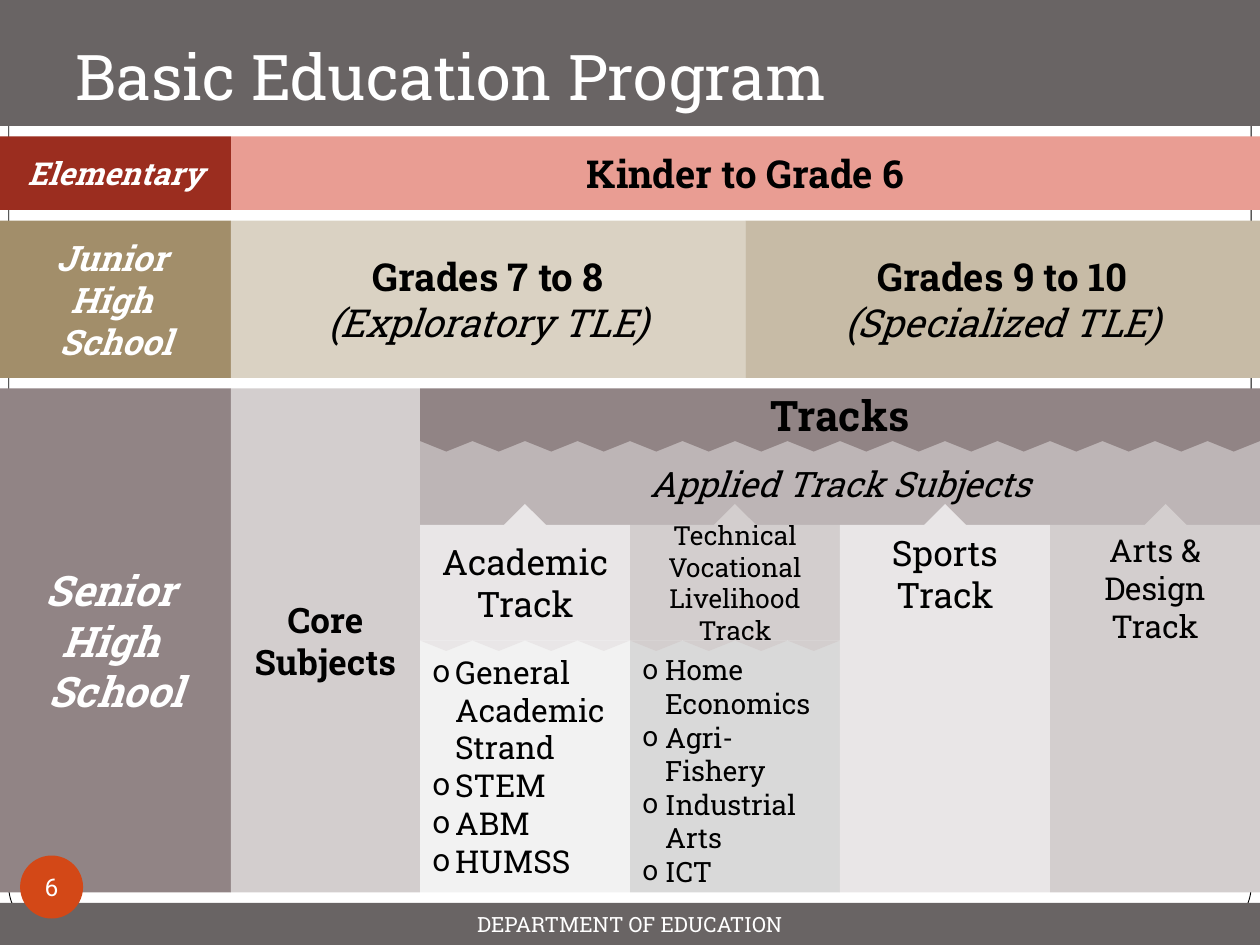
import pptx
import pptx.util
import pptx.dml.color
import pptx.enum.shapes
import pptx.enum.text
import pptx.oxml.ns
from lxml import etree

Cm, Pt = pptx.util.Cm, pptx.util.Pt
SHAPE = pptx.enum.shapes.MSO_SHAPE
ANCHOR = pptx.enum.text.MSO_ANCHOR
ALIGN = pptx.enum.text.PP_ALIGN

COLORS = {
    "white": "FFFFFF", "black": "000000", "banner": "696464", "badge": "D34817",
    "red": "9B2D1F", "pink": "E99D93",
    "tan": "A28E6A", "sand": "DAD2C3", "khaki": "C7BBA6",
    "mauve": "918485", "applied": "BDB5B6", "core": "D3CECE", "light": "E9E6E7",
    "academic_strands": "F2F2F2", "vocational_strands": "D9D9D9",
}

# Content. Places are left, top, width, height in grid units of 1/12 inch.
# Each line of text is (text, style), where b is bold and i is italic.
BLOCKS = [
    ((22, 13, 98, 7), "pink", "black", 22, [("Kinder to Grade 6", "b")]),
    ((0, 13, 22, 7), "red", "white", 18, [("Elementary", "bi")]),
    ((0, 21, 22, 15), "tan", "white", 20,
     [("Junior ", "bi"), ("High ", "bi"), ("School", "bi")]),
    ((22, 21, 49, 15), "sand", "black", 22,
     [("Grades 7 to 8", "b"), ("(Exploratory TLE)", "i")]),
    ((71, 21, 49, 15), "khaki", "black", 22,
     [("Grades 9 to 10", "b"), ("(Specialized TLE)", "i")]),
    ((0, 37, 22, 48), "mauve", "white", 24,
     [("Senior ", "bi"), ("High ", "bi"), ("School", "bi")]),
    ((22, 37, 18, 48), "core", "black", 20, [("Core Subjects", "b")]),
    ((40, 37, 80, 5), "mauve", "black", 24, [("Tracks", "b")]),
    ((40, 42, 80, 8), "applied", "black", 20, [("Applied Track Subjects", "i")]),
]
# Track name, size, colour, pointer left, strands, strand size, strand colour
TRACKS = [
    ("Academic Track", 20, "light", 48,
     ["General Academic Strand", "STEM", "ABM", "HUMSS"], 18, "academic_strands"),
    ("Technical Vocational Livelihood Track", 15, "core", 68,
     ["Home Economics", "Agri-Fishery", "Industrial Arts", "ICT"], 16,
     "vocational_strands"),
    ("Sports Track", 20, "light", 88, [], 0, None),
    ("Arts & Design Track", 18, "core", 109, [], 0, None),
]
TRACK_LEFT, TRACK_TOP, TRACK_WIDTH = 40, 50, 20
NAME_HEIGHT, FULL_HEIGHT = 11, 35
TOOTH_WIDTH = 5


def units(count):
    return Cm(count * 2.54 / 12)


def rgb(name):
    return pptx.dml.color.RGBColor.from_string(COLORS[name])


def add_block(place, fill, kind=SHAPE.RECTANGLE):
    block = slide.shapes.add_shape(kind, *map(units, place))
    block.shadow.inherit = False
    block.fill.solid()
    block.fill.fore_color.rgb = rgb(fill)
    block.line.fill.background()
    return block


def write(block, lines, size, color="black", anchor=ANCHOR.MIDDLE,
          align=ALIGN.CENTER, font="Roboto Slab"):
    frame = block.text_frame
    frame.word_wrap = True
    frame.vertical_anchor = anchor
    frame.text = "\n".join(text for text, _ in lines)
    for paragraph, (_, style) in zip(frame.paragraphs, lines):
        paragraph.alignment = align
        for run in paragraph.runs:
            run.font.name = font
            run.font.size = Pt(size)
            run.font.color.rgb = rgb(color)
            run.font.bold = "b" in style
            run.font.italic = "i" in style
    return frame


def add_bullets(frame):
    for paragraph in frame.paragraphs:
        properties = paragraph._p.get_or_add_pPr()
        properties.set("marL", str(Cm(0.46)))
        properties.set("indent", str(-Cm(0.46)))
        for tag, key, value in (("a:buFont", "typeface", "Roboto"),
                                ("a:buChar", "char", "o")):
            etree.SubElement(properties, pptx.oxml.ns.qn(tag)).set(key, value)


def add_teeth(left, top, width, fill):
    for tooth_left in range(left, left + width, TOOTH_WIDTH):
        tooth = add_block((tooth_left, top, TOOTH_WIDTH, 1), fill,
                          SHAPE.ISOSCELES_TRIANGLE)
        tooth.rotation = 180


presentation = pptx.Presentation()
presentation.slide_width, presentation.slide_height = Cm(25.4), Cm(19.05)
slide = presentation.slides.add_slide(presentation.slide_layouts[6])

# Slide border
border = add_block((0.84, 0.96, 118.32, 87.84), "white", SHAPE.ROUNDED_RECTANGLE)
border.adjustments[0] = 0.05
border.line.color.rgb = rgb("black")
border.line.width = Pt(0.5)

# Title and footer bands
add_block((0, 0, 120, 12), "banner")
title = slide.shapes.add_textbox(*map(units, (6, 0, 108, 12)))
title_frame = write(title, [("Basic Education Program", "")], 36, "white",
                    ANCHOR.BOTTOM, ALIGN.LEFT)
title_frame.margin_bottom = Cm(0.25)
add_block((0, 86, 120, 4), "banner")
footer = slide.shapes.add_textbox(*map(units, (6, 86, 108, 4)))
write(footer, [("DEPARTMENT OF EDUCATION", "")], 12, "white")

# School levels
for place, fill, color, size, lines in BLOCKS:
    write(add_block(place, fill), lines, size, color)
add_teeth(TRACK_LEFT, 42, 80, "mauve")

# Senior high school tracks, with strands where there are any
for column, (name, size, fill, pointer, strands, strand_size,
             strand_fill) in enumerate(TRACKS):
    left = TRACK_LEFT + column * TRACK_WIDTH
    height = NAME_HEIGHT if strands else FULL_HEIGHT
    track = add_block((left, TRACK_TOP, TRACK_WIDTH, height), fill)
    write(track, [(name, "")], size,
          anchor=ANCHOR.MIDDLE if strands else ANCHOR.TOP)
    add_block((pointer, TRACK_TOP - 2, 4, 2), fill, SHAPE.ISOSCELES_TRIANGLE)
    if strands:
        strand_top = TRACK_TOP + NAME_HEIGHT
        strand_box = add_block((left, strand_top, TRACK_WIDTH,
                                FULL_HEIGHT - NAME_HEIGHT), strand_fill)
        strand_frame = write(strand_box, [(strand, "") for strand in strands],
                             strand_size, anchor=ANCHOR.TOP, align=ALIGN.LEFT)
        strand_frame.margin_top = strand_frame.margin_bottom = Cm(0.25)
        add_bullets(strand_frame)
        add_teeth(left, strand_top, TRACK_WIDTH, fill)

# Page number badge
badge = add_block((1.92, 81.48, 6, 6), "badge", SHAPE.OVAL)
badge_frame = write(badge, [("6", "")], 14, "white", font="Roboto")
badge_frame.word_wrap = False
badge_frame.margin_left = badge_frame.margin_right = 0
badge_frame.margin_top = badge_frame.margin_bottom = 0

presentation.save("out.pptx")
